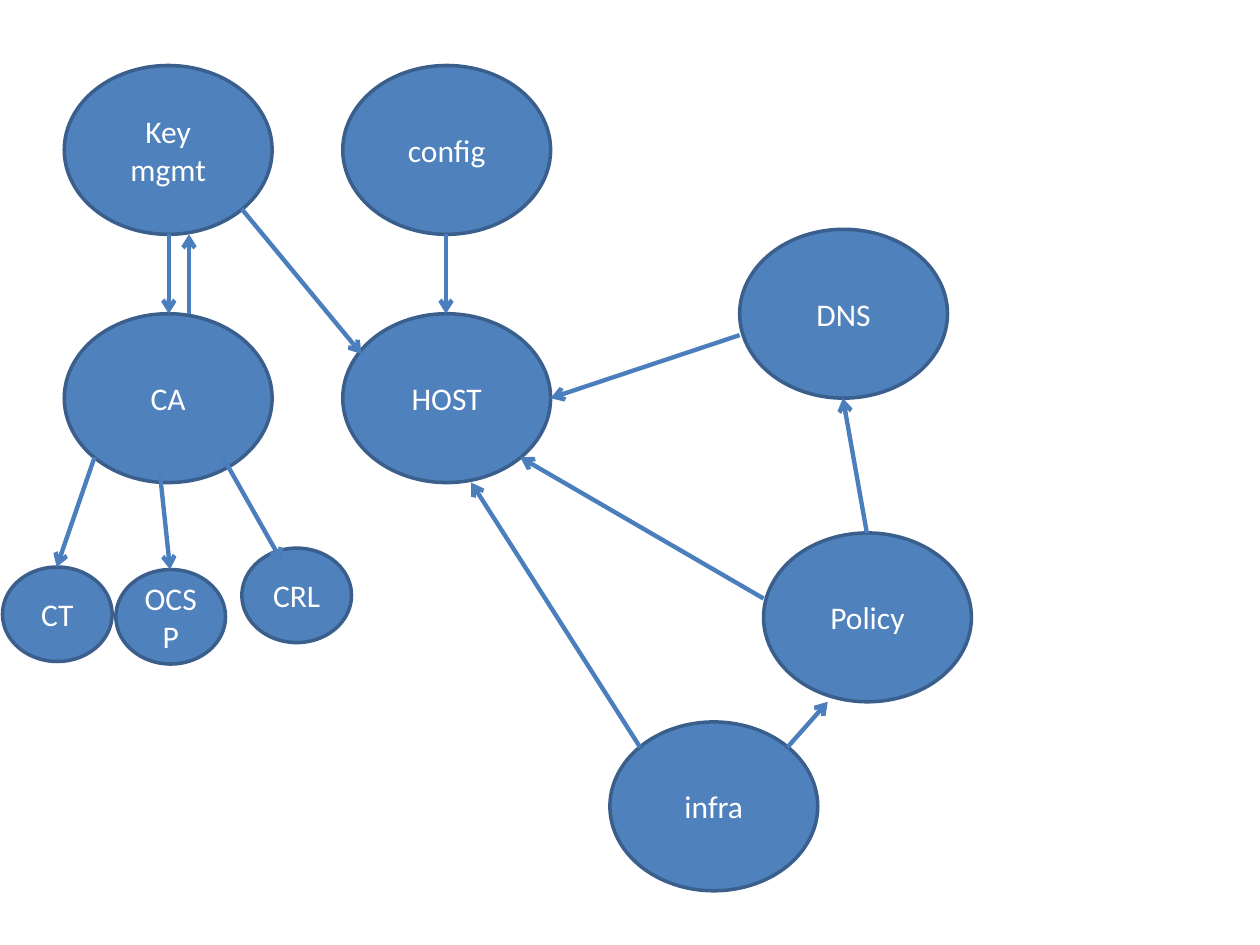
from lxml import etree
from pptx import Presentation
from pptx.dml.color import RGBColor
from pptx.enum.shapes import MSO_CONNECTOR, MSO_SHAPE
from pptx.enum.text import MSO_ANCHOR, PP_ALIGN
from pptx.oxml.ns import qn
from pptx.util import Inches, Pt

ELLIPSE = MSO_SHAPE.OVAL
STRAIGHT = MSO_CONNECTOR.STRAIGHT
MIDDLE = MSO_ANCHOR.MIDDLE
CENTER = PP_ALIGN.CENTER

FONT = "Calibri"
NODE_FILL = "4F81BD"
NODE_LINE = "3A5F8C"
ARROW_LINE = "4B7EBC"
TEXT = "FFFFFF"

LARGE = (1.65, 1.34)
SMALL = (0.87, 0.75)
LEFT_COLUMN, HOST_COLUMN = 0.51, 2.72
TOP_ROW, HOST_ROW = 0.52, 2.49

NODES = [
    ("HOST", HOST_COLUMN, HOST_ROW, LARGE),
    ("CA", LEFT_COLUMN, HOST_ROW, LARGE),
    ("Key mgmt", LEFT_COLUMN, TOP_ROW, LARGE),
    ("config", HOST_COLUMN, TOP_ROW, LARGE),
    ("DNS", 5.87, 1.82, LARGE),
    ("Policy", 6.06, 4.23, LARGE),
    ("infra", 4.84, 5.73, LARGE),
    ("CRL", 1.92, 4.35, SMALL),
    ("OCSP", 0.92, 4.52, SMALL),
    ("CT", 0.02, 4.5, SMALL),
]

HOST_ARROWS = [
    ((1.92, 1.66), (2.87, 2.81)),
    ((3.54, 1.86), (3.54, 2.49)),
    ((5.87, 2.66), (4.37, 3.16)),
    ((6.06, 4.75), (4.13, 3.63)),
    ((5.08, 5.93), (3.74, 3.83)),
]
CA_ARROWS = [
    ((1.34, 1.86), (1.34, 2.49)),
    ((1.5, 2.49), (1.5, 1.86)),
    ((1.77, 3.63), (2.24, 4.46)),
    ((1.27, 3.76), (1.35, 4.52)),
    ((0.75, 3.63), (0.45, 4.5)),
]
POLICY_ARROWS = [
    ((6.88, 4.23), (6.69, 3.16)),
    ((6.25, 5.93), (6.57, 5.57)),
]


def color(value):
    return RGBColor.from_string(value)


def style_line(line, value, width):
    line.color.rgb = color(value)
    line.width = Pt(width)


def add_node(page, label, left, top, size):
    node = page.shapes.add_shape(ELLIPSE, *map(Inches, (left, top, *size)))
    node.shadow.inherit = False
    node.fill.solid()
    node.fill.fore_color.rgb = color(NODE_FILL)
    style_line(node.line, NODE_LINE, 2)
    frame = node.text_frame
    frame.word_wrap = True
    frame.vertical_anchor = MIDDLE
    para = frame.paragraphs[0]
    para.alignment = CENTER
    span = para.add_run()
    span.text = label
    span.font.name = FONT
    span.font.size = Pt(18)
    span.font.color.rgb = color(TEXT)


def add_arrow(page, start, end):
    arrow = page.shapes.add_connector(STRAIGHT, *map(Inches, (*start, *end)))
    style_line(arrow.line, ARROW_LINE, 2.5)
    properties = arrow._element.spPr
    etree.SubElement(properties.find(qn("a:ln")), qn("a:tailEnd"), type="arrow")
    etree.SubElement(properties, qn("a:effectLst"))


def main():
    deck = Presentation()
    deck.slide_width = Inches(10)
    deck.slide_height = Inches(7.5)
    page = deck.slides.add_slide(deck.slide_layouts[6])
    for label, left, top, size in NODES:
        add_node(page, label, left, top, size)
    for start, end in HOST_ARROWS + CA_ARROWS + POLICY_ARROWS:
        add_arrow(page, start, end)
    deck.save("out.pptx")


if __name__ == "__main__":
    main()
